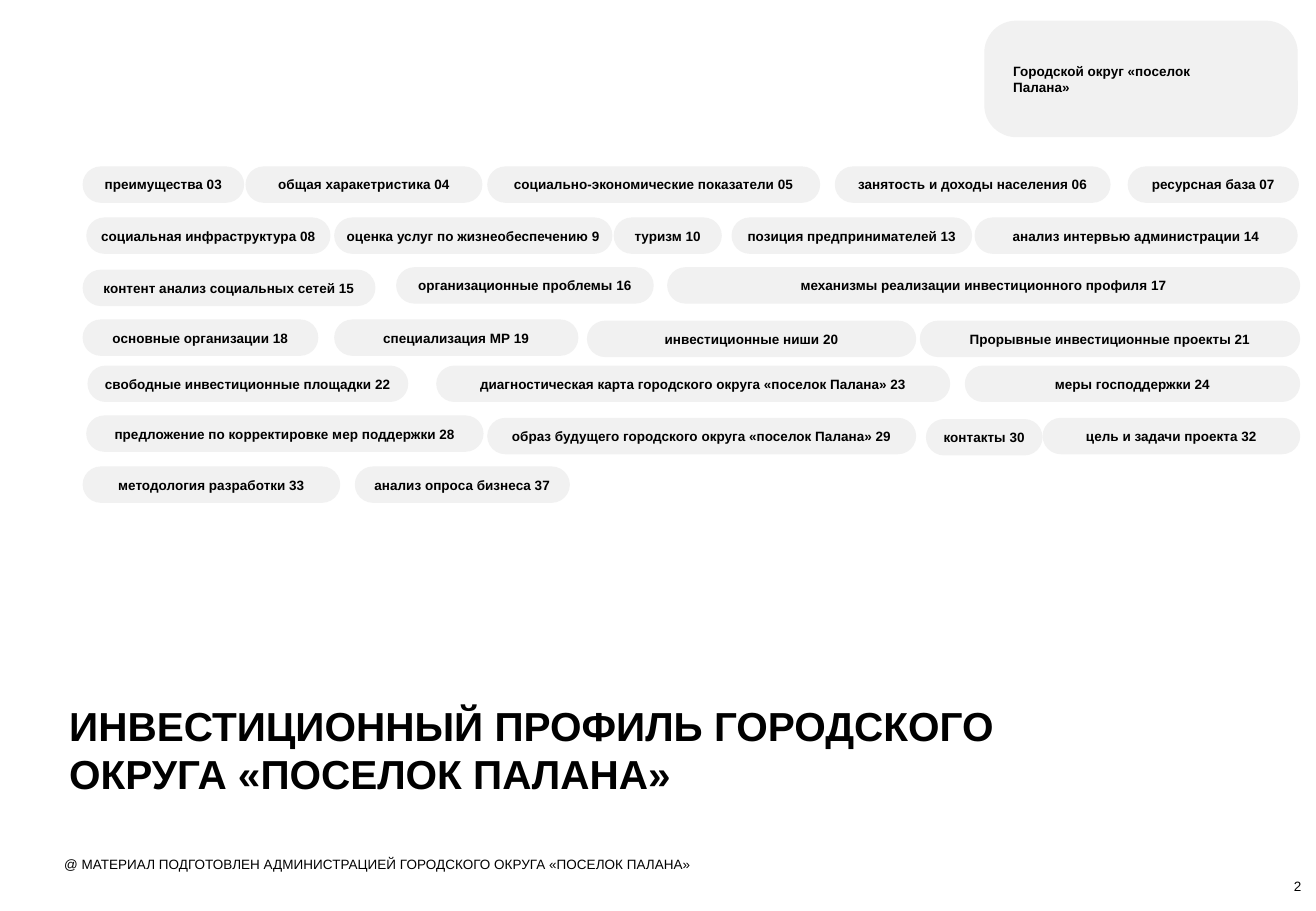
import pptx
import pptx.util
import pptx.dml.color
import pptx.enum.shapes
import pptx.enum.text

# Content: each row is its top, then pills as (left, width, text[, drop]).
# All lengths are in grid steps of 1/100 inch.
WIDTH, HEIGHT, PILL_H = 1083, 750, 30
ROWS = [
    (137, [(68, 133, "преимущества 03"),
           (202, 195, "общая харакетристика 04"),
           (401, 274, "социально-экономические показатели 05"),
           (687, 227, "занятость и доходы населения 06"),
           (928, 141, "ресурсная база 07")]),
    (179, [(71, 201, "социальная инфраструктура 08"),
           (275, 229, "оценка услуг по жизнеобеспечению 9"),
           (505, 89, "туризм 10"),
           (602, 198, "позиция предпринимателей 13"),
           (802, 266, "анализ интервью администрации 14")]),
    (220, [(68, 241, "контент анализ социальных сетей 15", 2),
           (326, 212, "организационные проблемы 16"),
           (549, 521, "механизмы реализации инвестиционного профиля 17")]),
    (263, [(68, 194, "основные организации 18"),
           (275, 201, "специализация МР 19"),
           (483, 271, "инвестиционные ниши 20", 1),
           (757, 313, "Прорывные инвестиционные проекты 21", 1)]),
    (301, [(72, 264, "свободные инвестиционные площадки 22"),
           (359, 423, "диагностическая карта городского округа «поселок Палана» 23"),
           (794, 276, "меры господдержки 24")]),
    (342, [(71, 327, "предложение по корректировке мер поддержки 28"),
           (401, 353, "образ будущего городского округа «поселок Палана» 29", 2),
           (762, 96, "контакты 30", 3),
           (858, 212, "цель и задачи проекта 32", 2)]),
    (384, [(68, 212, "методология разработки 33"),
           (292, 177, "анализ опроса бизнеса 37")]),
]
BADGE = "Городской округ «поселок Палана»"
TITLE = "ИНВЕСТИЦИОННЫЙ ПРОФИЛЬ ГОРОДСКОГО ОКРУГА «ПОСЕЛОК ПАЛАНА»"
CREDIT = "@ МАТЕРИАЛ ПОДГОТОВЛЕН АДМИНИСТРАЦИЕЙ ГОРОДСКОГО ОКРУГА «ПОСЕЛОК ПАЛАНА»"
PAGE = "2"
COLORS = {"pill": "F1F1F1", "text": "000000"}

ALIGN = pptx.enum.text.PP_ALIGN
ANCHOR = pptx.enum.text.MSO_ANCHOR


def grid(steps):
    return pptx.util.Inches(steps / 100)


def rgb(name):
    return pptx.dml.color.RGBColor.from_string(COLORS[name])


def write(sp, text, size=8, bold=True, align=ALIGN.LEFT,
          anchor=ANCHOR.MIDDLE, insets=(0, 0, 0, 0)):
    tf = sp.text_frame
    tf.word_wrap = True
    tf.vertical_anchor = anchor
    tf.margin_left, tf.margin_top, tf.margin_right, tf.margin_bottom = map(grid, insets)
    p = tf.paragraphs[0]
    p.alignment = align
    r = p.add_run()
    r.text = text
    r.font.name = "Arial"
    r.font.size = pptx.util.Pt(size)
    r.font.bold = bold
    r.font.color.rgb = rgb("text")


def add_pill(slide, box, text, rounding=0.5, **fmt):
    sp = slide.shapes.add_shape(
        pptx.enum.shapes.MSO_SHAPE.ROUNDED_RECTANGLE, *map(grid, box))
    sp.adjustments[0] = rounding
    sp.shadow.inherit = False
    sp.fill.solid()
    sp.fill.fore_color.rgb = rgb("pill")
    sp.line.fill.background()
    write(sp, text, **fmt)


def add_text(slide, box, text, **fmt):
    write(slide.shapes.add_textbox(*map(grid, box)), text, **fmt)


def main():
    prs = pptx.Presentation()
    prs.slide_width, prs.slide_height = grid(WIDTH), grid(HEIGHT)
    slide = prs.slides.add_slide(prs.slide_layouts[6])

    # Contents pills
    for top, pills in ROWS:
        for left, width, text, *drop in pills:
            add_pill(slide, (left, top + sum(drop), width, PILL_H), text,
                     align=ALIGN.CENTER)

    # Badge in the top right corner
    add_pill(slide, (810, 17, 258, 96), BADGE, rounding=0.275,
             insets=(16, 5, 79, 5))

    # Title, credit and page number
    add_text(slide, (57, 577, 800, 121), TITLE, size=24, anchor=ANCHOR.TOP)
    add_text(slide, (43, 700, 973, 24), CREDIT, bold=False, anchor=ANCHOR.TOP,
             insets=(10, 5, 10, 5))
    add_text(slide, (991, 723, 80, 13), PAGE, bold=False, align=ALIGN.RIGHT,
             anchor=ANCHOR.BOTTOM)

    prs.save("out.pptx")


if __name__ == "__main__":
    main()
